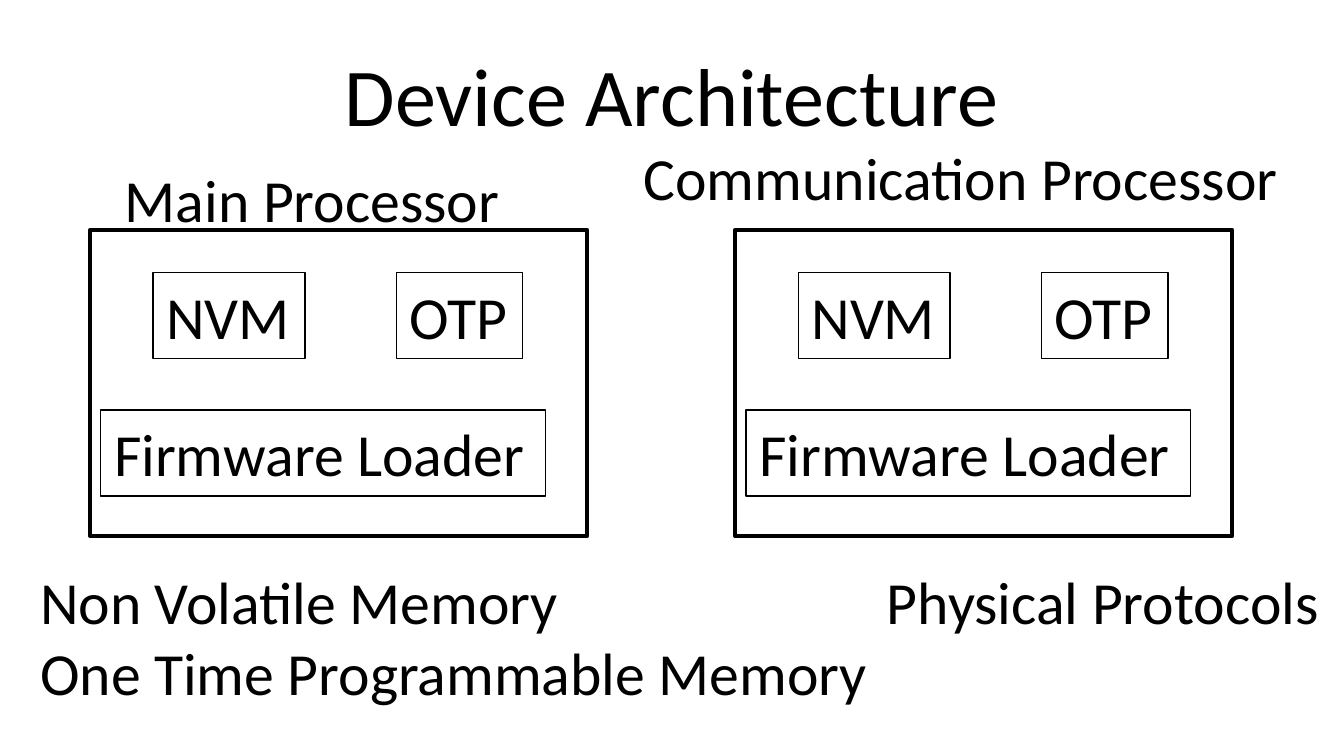
from pptx import Presentation
from pptx.dml.color import RGBColor
from pptx.enum.shapes import MSO_SHAPE
from pptx.enum.text import MSO_ANCHOR, MSO_AUTO_SIZE, PP_ALIGN
from pptx.util import Inches, Pt

RECTANGLE = MSO_SHAPE.RECTANGLE
MIDDLE, TOP = MSO_ANCHOR.MIDDLE, MSO_ANCHOR.TOP
CENTER, LEFT = PP_ALIGN.CENTER, PP_ALIGN.LEFT
GROW, FIXED = MSO_AUTO_SIZE.SHAPE_TO_FIT_TEXT, MSO_AUTO_SIZE.NONE
TITLE_ONLY = 5
BLACK, WHITE = "000000", "FFFFFF"


def color(value):
    return RGBColor.from_string(value)


def write(box, lines, size=32, align=LEFT, anchor=TOP, wrap=False, auto_size=GROW):
    """Fill a shape with one paragraph per line."""
    frame = box.text_frame
    frame.word_wrap = wrap
    frame.auto_size = auto_size
    frame.vertical_anchor = anchor
    for number, line in enumerate(lines):
        para = frame.add_paragraph() if number else frame.paragraphs[0]
        para.alignment = align
        span = para.add_run()
        span.text = line
        span.font.name = "Calibri"
        span.font.size = Pt(size)
        span.font.color.rgb = color(BLACK)


deck = Presentation()
deck.slide_width = Inches(10)
deck.slide_height = Inches(10 * 9 / 16)
page = deck.slides.add_slide(deck.slide_layouts[TITLE_ONLY])

title = page.shapes.title
title.left, title.top = Inches(0.5), Inches(0.23)
title.width, title.height = Inches(9), Inches(0.94)
write(title, ["Device Architecture"], 44, CENTER, MIDDLE, True, FIXED)

# Parts of a processor: text, offset from its left edge, top, width, height, line width
parts = [
    (None, 0, 1.71, 3.7, 2.28, 2),
    ("NVM", 0.47, 2.03, 1.13, 0.64, 0.75),
    ("OTP", 2.28, 2.03, 0.94, 0.64, 0.75),
    ("Firmware Loader", 0.08, 3.05, 3.31, 0.64, 0.75),
]
for processor_left in (0.67, 5.47):
    for text, offset, top, width, height, line_width in parts:
        box = page.shapes.add_shape(
            RECTANGLE, Inches(processor_left + offset), Inches(top), Inches(width), Inches(height))
        box.shadow.inherit = False
        box.line.color.rgb = color(BLACK)
        box.line.width = Pt(line_width)
        if text:
            box.fill.solid()
            box.fill.fore_color.rgb = color(WHITE)
            write(box, [text], wrap=text == "Firmware Loader")
        else:
            box.fill.background()

labels = [
    (["Main Processor"], 0.83, 1.16, 3.02, 0.64),
    (["Communication Processor"], 4.69, 1, 4.97, 0.64),
    (["Non Volatile Memory", "One Time Programmable Memory"], 0.2, 4.15, 6.42, 1.18),
    (["Physical Protocols"], 6.5, 4.15, 3.45, 0.64),
]
for lines, left, top, width, height in labels:
    label = page.shapes.add_textbox(Inches(left), Inches(top), Inches(width), Inches(height))
    write(label, lines)

deck.save("out.pptx")
